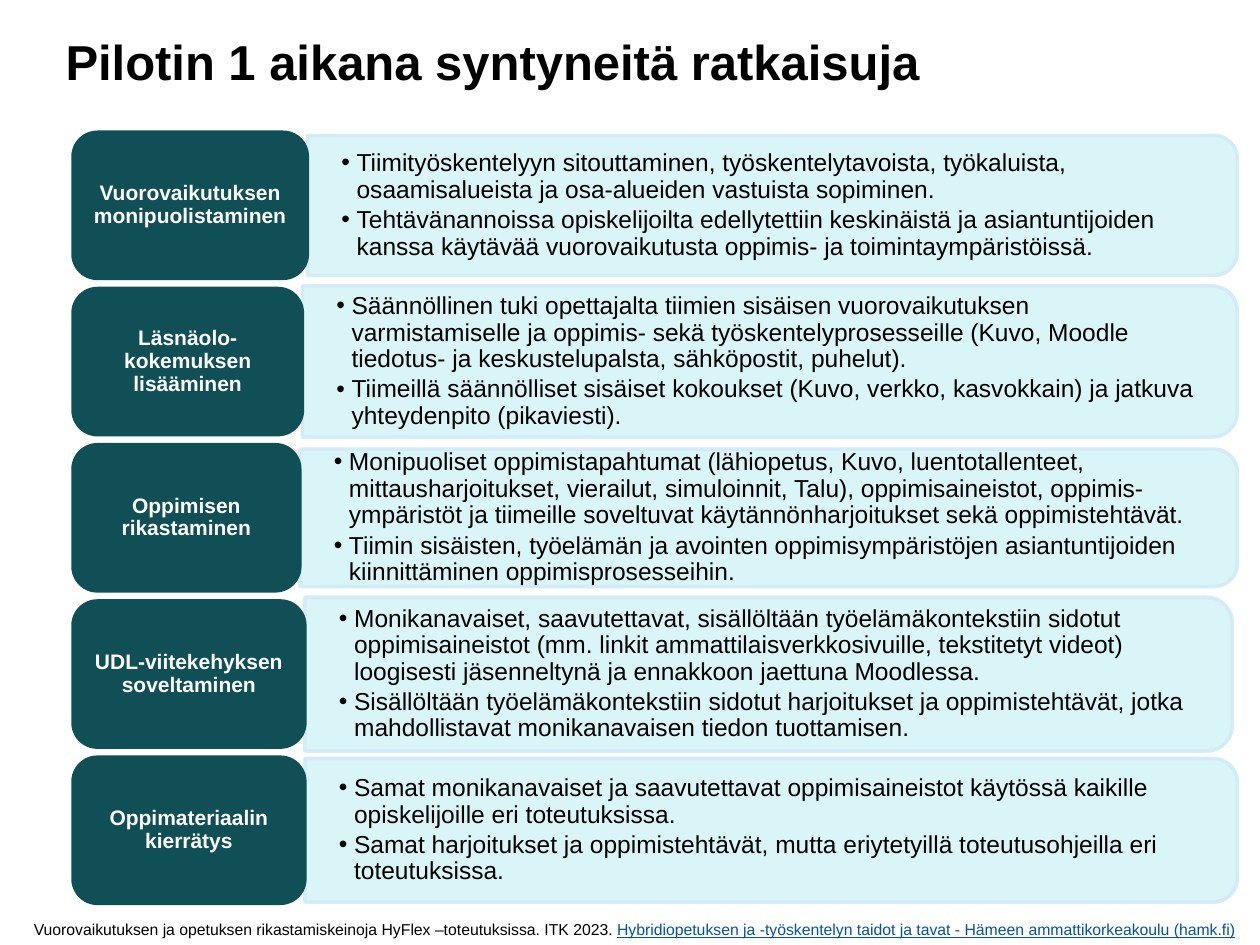
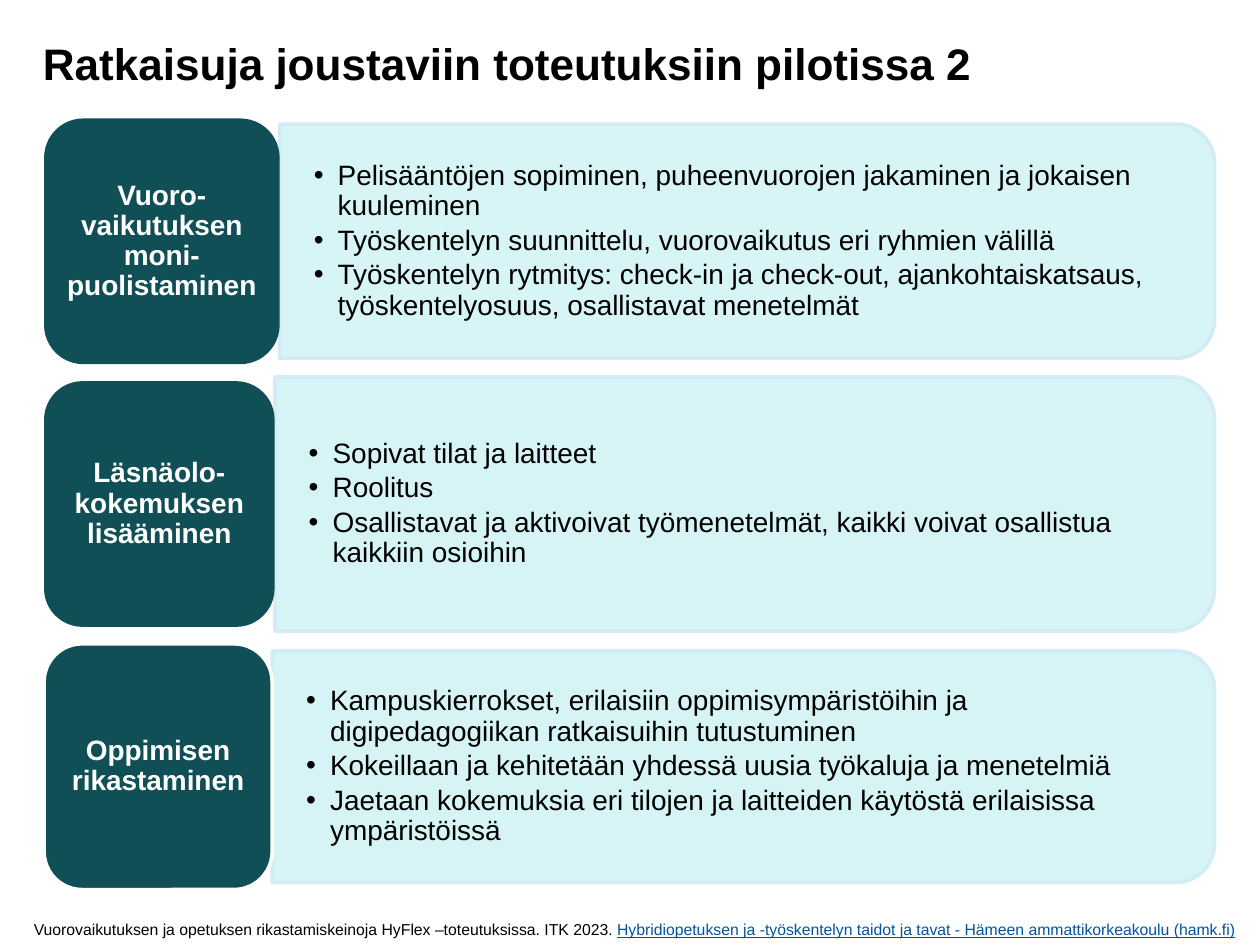
from dataclasses import dataclass

from lxml import etree
from pptx import Presentation
from pptx.dml.color import RGBColor
from pptx.enum.shapes import MSO_SHAPE
from pptx.enum.text import MSO_ANCHOR, PP_ALIGN
from pptx.oxml.ns import qn
from pptx.util import Inches, Pt

ROUND = MSO_SHAPE.ROUNDED_RECTANGLE
TAB = MSO_SHAPE.ROUND_2_SAME_RECTANGLE
TOP, MIDDLE = MSO_ANCHOR.TOP, MSO_ANCHOR.MIDDLE
LEFT, CENTER = PP_ALIGN.LEFT, PP_ALIGN.CENTER
TITLE_ONLY = 5


@dataclass(frozen=True)
class Theme:
    font: str = "Arial"
    ink: str = "000000"
    white: str = "FFFFFF"
    teal: str = "104F55"
    mint: str = "D7F4F7"
    aqua: str = "D2F3F6"
    edge: str = "D2EAF6"
    link: str = "00549F"
    stroke: float = 2
    foot: float = 9


T = Theme()

FOOT = [
    ("Vuorovaikutuksen ja opetuksen rikastamiskeinoja HyFlex –toteutuksissa. ITK 2023. ", T.ink),
    ("Hybridiopetuksen ja -työskentelyn taidot ja tavat - Hämeen ammattikorkeakoulu (hamk.fi)", T.link),
]

# Row: label, label width, card height, bullets, and any styling of its own
SLIDES = [
    dict(
        title="Pilotin 1 aikana syntyneitä ratkaisuja",
        place=(0.52, 0.2, 7.97, 0.62), title_size=28,
        left=0.58, right=9.82, top=1.05, step=1.24, tall=1.16,
        label_size=12, label_pad=0.05, size=14, indent=0.12,
        style=dict(fill=T.mint, alpha=90, border=T.teal),
        rows=[
            ("Vuorovaikutuksen monipuolistaminen", 1.86, 1.11, [
                "Tiimityöskentelyyn sitouttaminen, työskentelytavoista, työkaluista, "
                "osaamisalueista ja osa-alueiden vastuista sopiminen.",
                "Tehtävänannoissa opiskelijoilta edellytettiin keskinäistä ja asiantuntijoiden "
                "kanssa käytävää vuorovaikutusta oppimis- ja toimintaympäristöissä.",
            ], {}),
            ("Läsnäolo-kokemuksen lisääminen", 1.82, 1.2, [
                "Säännöllinen tuki opettajalta tiimien sisäisen vuorovaikutuksen "
                "varmistamiselle ja oppimis- sekä työskentelyprosesseille (Kuvo, Moodle "
                "tiedotus- ja keskustelupalsta, sähköpostit, puhelut).",
                "Tiimeillä säännölliset sisäiset kokoukset (Kuvo, verkko, kasvokkain) ja "
                "jatkuva yhteydenpito (pikaviesti).",
            ], {}),
            ("Oppimisen rikastaminen", 1.8, 1.09, [
                "Monipuoliset oppimistapahtumat (lähiopetus, Kuvo, luentotallenteet, "
                "mittausharjoitukset, vierailut, simuloinnit, Talu), oppimisaineistot, "
                "oppimis-ympäristöt ja tiimeille soveltuvat käytännönharjoitukset sekä "
                "oppimistehtävät.",
                "Tiimin sisäisten, työelämän ja avointen oppimisympäristöjen asiantuntijoiden "
                "kiinnittäminen oppimisprosesseihin.",
            ], {}),
            ("UDL-viitekehyksen soveltaminen", 1.84, 1.22, [
                "Monikanavaiset, saavutettavat, sisällöltään työelämäkontekstiin sidotut "
                "oppimisaineistot (mm. linkit ammattilaisverkkosivuille, tekstitetyt videot) "
                "loogisesti jäsenneltynä ja ennakkoon jaettuna Moodlessa.",
                "Sisällöltään työelämäkontekstiin sidotut harjoitukset ja oppimistehtävät, "
                "jotka mahdollistavat monikanavaisen tiedon tuottamisen.",
            ], dict(right=9.78)),
            ("Oppimateriaalin kierrätys", 1.84, 1.14, [
                "Samat monikanavaiset ja saavutettavat oppimisaineistot käytössä kaikille "
                "opiskelijoille eri toteutuksissa.",
                "Samat harjoitukset ja oppimistehtävät, mutta eriytetyillä toteutusohjeilla "
                "eri toteutuksissa.",
            ], {}),
        ],
    ),
    dict(
        title="Ratkaisuja joustaviin toteutuksiin pilotissa 2",
        place=(0.34, 0.25, 8.83, 0.39), title_size=25.2,
        left=0.35, right=9.64, top=0.94, step=2.085, tall=1.95,
        label_size=16, label_pad=0.07, size=16, indent=0.19,
        style=dict(fill=T.aqua, alpha=90, border=None),
        rows=[
            ("Vuoro-vaikutuksen moni-puolistaminen", 1.87, 1.86, [
                "Pelisääntöjen sopiminen, puheenvuorojen jakaminen ja jokaisen kuuleminen",
                "Työskentelyn suunnittelu, vuorovaikutus eri ryhmien välillä",
                "Työskentelyn rytmitys: check-in ja check-out, ajankohtaiskatsaus, "
                "työskentelyosuus, osallistavat menetelmät",
            ], dict(fill=T.mint, alpha=100)),
            ("Läsnäolo-kokemuksen lisääminen", 1.83, 2.02, [
                "Sopivat tilat ja laitteet",
                "Roolitus",
                "Osallistavat ja aktivoivat työmenetelmät, kaikki voivat osallistua "
                "kaikkiin osioihin",
            ], {}),
            ("Oppimisen rikastaminen", 1.81, 1.84, [
                "Kampuskierrokset, erilaisiin oppimisympäristöihin ja digipedagogiikan "
                "ratkaisuihin tutustuminen",
                "Kokeillaan ja kehitetään yhdessä uusia työkaluja ja menetelmiä",
                "Jaetaan kokemuksia eri tilojen ja laitteiden käytöstä erilaisissa "
                "ympäristöissä",
            ], dict(border=T.white)),
        ],
    ),
]


def inches(*nums):
    return [Inches(n) for n in nums]


def add_bullet(par, indent):
    props = par._p.get_or_add_pPr()
    props.set("marL", str(Inches(indent)))
    props.set("indent", str(-Inches(indent)))
    tint = etree.SubElement(props, qn("a:buClr"))
    etree.SubElement(tint, qn("a:srgbClr"), val=T.ink)
    etree.SubElement(props, qn("a:buFont"), typeface=T.font)
    etree.SubElement(props, qn("a:buChar"), char="•")


def write(shape, pars, size, color=T.ink, bold=False, align=LEFT, anchor=TOP,
          pad=(0, 0), indent=0, lead=1.0, after=0):
    """Fill a shape with paragraphs; each is a string or a list of (text, colour) runs."""
    frame = shape.text_frame
    frame.word_wrap = True
    frame.vertical_anchor = anchor
    frame.margin_left = frame.margin_right = Inches(pad[0])
    frame.margin_top = frame.margin_bottom = Inches(pad[1])
    for i, runs in enumerate(pars):
        par = frame.add_paragraph() if i else frame.paragraphs[0]
        if indent:
            add_bullet(par, indent)
        par.alignment, par.line_spacing = align, lead
        par.space_before, par.space_after = Pt(0), Pt(after)
        for text, tint in [(runs, color)] if isinstance(runs, str) else runs:
            run = par.add_run()
            run.text = text
            font = run.font
            font.name, font.size, font.bold = T.font, Pt(size), bold
            font.color.rgb = RGBColor.from_string(tint)
            if tint == T.link:
                font.underline = True


def paint(part, color, alpha=100):
    """Give a fill one solid colour, with alpha in percent."""
    part.solid()
    part.fore_color.rgb = RGBColor.from_string(color)
    if alpha < 100:
        tint = part._xPr.find(qn("a:solidFill"))[0]
        etree.SubElement(tint, qn("a:alpha"), val=str(alpha * 1000))


def draw(slide, kind, box, fill, border, alpha=100):
    shape = slide.shapes.add_shape(kind, *inches(*box))
    shape.shadow.inherit = False
    paint(shape.fill, fill, alpha)
    if border:
        shape.line.width = Pt(T.stroke)
        paint(shape.line.fill, border, alpha)
    else:
        shape.line.fill.background()
    return shape


def add_row(slide, page, i):
    """Draw a label and its card, both centred on the same line."""
    name, wide, high, points, own = page["rows"][i]
    look = {"right": page["right"], **page["style"], **own}
    top = page["top"] + i * page["step"]
    mid = top + page["tall"] / 2
    start = page["left"] + wide
    span = look["right"] - start

    # The card is a tab shape turned a quarter, so its sides swap
    card = draw(slide, TAB, (start + (span - high) / 2, mid - span / 2, high, span),
                look["fill"], T.edge, look["alpha"])
    card.rotation = 90

    inset = 0.049 * high
    body = slide.shapes.add_textbox(
        *inches(start, mid - high / 2 + inset, span - inset, high - 2 * inset))
    write(body, points, page["size"], anchor=MIDDLE, pad=(0.27, 0.14),
          indent=page["indent"], lead=0.9, after=0.16 * page["size"])

    label = draw(slide, ROUND, (page["left"], top, wide, page["tall"]),
                 T.teal, look["border"])
    write(label, [name], page["label_size"], color=T.white, bold=True, align=CENTER,
          anchor=MIDDLE, pad=(page["label_pad"], 0.03), lead=0.9,
          after=0.35 * page["label_size"])


def add_page(deck, page):
    slide = deck.slides.add_slide(deck.slide_layouts[TITLE_ONLY])
    title = slide.shapes.title
    title.left, title.top, title.width, title.height = inches(*page["place"])
    write(title, [page["title"]], page["title_size"], bold=True, lead=1.1)
    for i in range(len(page["rows"])):
        add_row(slide, page, i)
    foot = slide.shapes.add_textbox(*inches(0.17, 7.25, 9.83, 0.25))
    write(foot, [FOOT], T.foot, pad=(0.1, 0.05))


def main():
    deck = Presentation()
    deck.slide_width, deck.slide_height = inches(10, 7.5)
    for page in SLIDES:
        add_page(deck, page)
    deck.save("out.pptx")


if __name__ == "__main__":
    main()
